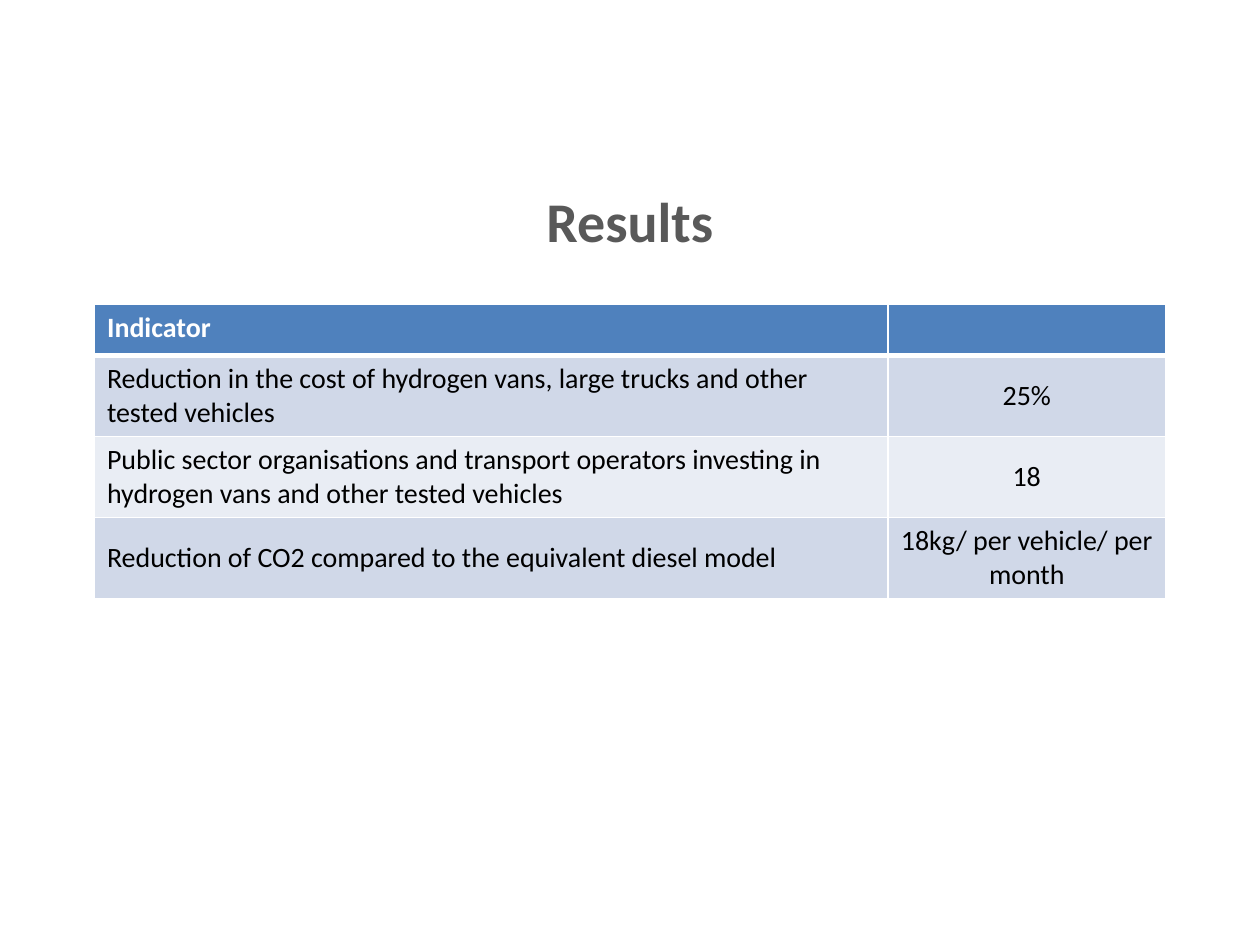
from dataclasses import dataclass

from lxml.etree import SubElement
from pptx import Presentation
from pptx.dml.color import RGBColor
from pptx.enum.text import MSO_ANCHOR, PP_ALIGN
from pptx.oxml import parse_xml
from pptx.oxml.ns import nsdecls, qn
from pptx.util import Pt


@dataclass(frozen=True)
class Theme:
    font: str = "Calibri"
    heading_size: int = 32
    table_size: int = 16
    heading: str = "595959"
    header_fill: str = "4F81BD"
    odd_fill: str = "D0D8E8"
    even_fill: str = "E9EDF4"
    text: str = "000000"
    white: str = "FFFFFF"


theme = Theme()


def add_run(paragraph, text, size, color, bold=False):
    run = paragraph.add_run()
    run.text = text
    run.font.name = theme.font
    run.font.size = Pt(size)
    run.font.bold = bold
    run.font.color.rgb = RGBColor.from_string(color)


def add_borders(cell, top_width, bottom_width):
    widths = {"lnL": 1, "lnR": 1, "lnT": top_width, "lnB": bottom_width}
    properties = cell._tc.get_or_add_tcPr()
    for position, (side, width) in enumerate(widths.items()):
        properties.insert(position, parse_xml(
            f'<a:{side} {nsdecls("a")} w="{Pt(width)}"><a:solidFill>'
            f'<a:srgbClr val="{theme.white}"/></a:solidFill></a:{side}>'))


presentation = Presentation()
presentation.slide_width = Pt(720)
presentation.slide_height = Pt(540)
slide = presentation.slides.add_slide(presentation.slide_layouts[1])
empty_title = slide.shapes.title.element
empty_title.getparent().remove(empty_title)

# Heading
heading = slide.placeholders[1]
heading.left, heading.top = Pt(36), Pt(103)
heading.width, heading.height = Pt(648), Pt(379.5)
heading_line = heading.text_frame.paragraphs[0]
heading_line.alignment = PP_ALIGN.CENTER
line_properties = heading_line._p.get_or_add_pPr()
line_properties.set("marL", "0")
line_properties.set("indent", "0")
SubElement(line_properties, qn("a:buNone"))
add_run(heading_line, "Results", theme.heading_size, theme.heading, bold=True)

# Indicators
indicators = [
    ("Indicator", ""),
    ("Reduction in the cost of hydrogen vans, large trucks and other tested vehicles", "25%"),
    ("Public sector organisations and transport operators investing in "
     "hydrogen vans and other tested vehicles", "18"),
    ("Reduction of CO2 compared to the equivalent diesel model",
     "18kg/ per vehicle/ per month"),
]
header_height, row_height = 29.2, 46.3
results = slide.shapes.add_table(
    len(indicators), 2, Pt(54), Pt(173.8), Pt(612),
    Pt(header_height + row_height * (len(indicators) - 1))).table
results.columns[0].width = Pt(453.5)
results.columns[1].width = Pt(158.5)

for row, values in enumerate(indicators):
    is_header = row == 0
    results.rows[row].height = Pt(header_height if is_header else row_height)
    if is_header:
        fill, color = theme.header_fill, theme.white
    else:
        fill, color = (theme.odd_fill if row % 2 else theme.even_fill), theme.text
    for column, value in enumerate(values):
        cell = results.cell(row, column)
        cell.fill.solid()
        cell.fill.fore_color.rgb = RGBColor.from_string(fill)
        cell.vertical_anchor = MSO_ANCHOR.TOP if is_header else MSO_ANCHOR.MIDDLE
        add_borders(cell, 3 if row == 1 else 1, 3 if is_header else 1)
        if value:
            paragraph = cell.text_frame.paragraphs[0]
            paragraph.alignment = PP_ALIGN.CENTER if column else PP_ALIGN.LEFT
            add_run(paragraph, value, theme.table_size, color, bold=is_header)

presentation.save("out.pptx")
